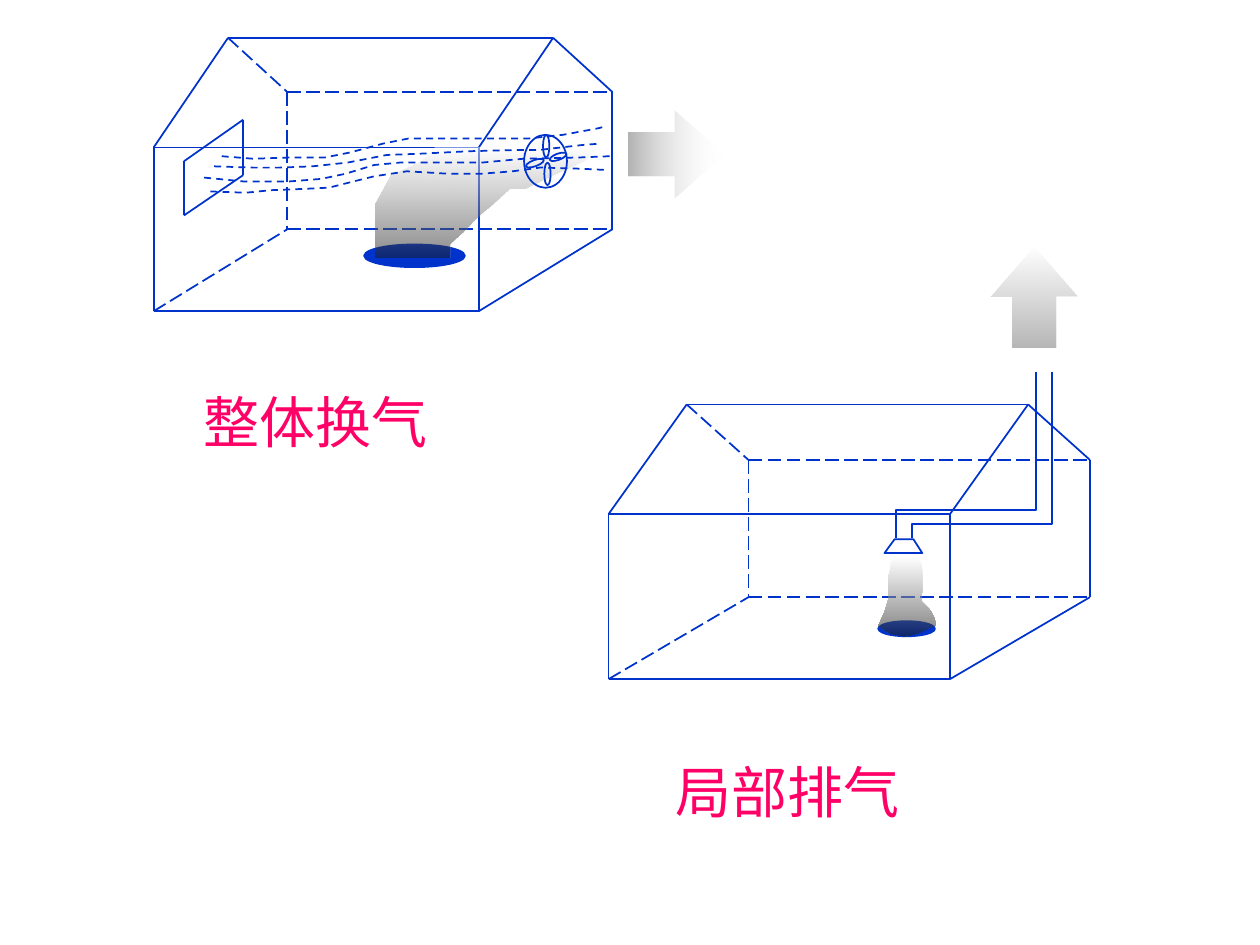
from lxml import etree
from pptx import Presentation
from pptx.dml.color import RGBColor
from pptx.enum.dml import MSO_LINE
from pptx.enum.shapes import MSO_CONNECTOR, MSO_SHAPE
from pptx.enum.text import MSO_AUTO_SIZE
from pptx.oxml.ns import qn
from pptx.util import Inches, Pt

BLUE, PINK = "0033CC", "FF0066"
rgb = RGBColor.from_string


def style(s, line=BLUE, dash=None, fill=None, grad=None, angle=0):
    if line:
        s.line.color.rgb = rgb(line)
        s.line.width = Pt(1)
        s.line.dash_style = dash
    else:
        s.line.fill.background()
    spPr = s._element.spPr
    if fill:
        s.fill.solid()
        s.fill.fore_color.rgb = rgb(fill)
    elif grad:
        s.fill.gradient()
        s.fill.gradient_angle = angle
        spPr.find(qn("a:gradFill")).set("rotWithShape", "0")
        for i, (stop, (color, alpha)) in enumerate(zip(s.fill.gradient_stops, grad)):
            stop.color.rgb = rgb(color)
            stop.position = i
            clr = list(spPr.iter(qn("a:gs")))[i][0]
            etree.SubElement(clr, qn("a:alpha")).set("val", str(alpha * 1000))
    elif hasattr(s, "fill"):
        s.fill.background()
    etree.SubElement(spPr, qn("a:effectLst"))
    return s


def free(shapes, points, close=False, **look):
    pts = [(Inches(x), Inches(y)) for x, y in points]
    fb = shapes.build_freeform(*pts[0], scale=1.0)
    fb.add_line_segments(pts[1:], close=close)
    return style(fb.convert_to_shape(), **look)


prs = Presentation()
prs.slide_width, prs.slide_height = Inches(10), Inches(7.5)
slide = prs.slides.add_slide(prs.slide_layouts[6])

houses = [
    dict(xs=(1.22, 1.81, 2.28), width=2.58, ys=(0.3, 0.73, 1.17, 1.82, 2.47),
         pool=(2.89, 1.94, 0.8, 0.18), alphas=(49, 51),
         plume=[(2.98, 2.04), (2.98, 1.61), (3.1, 1.39), (3.34, 1.28), (3.45, 1.17),
                (4.74, 1.17), (4.63, 1.28), (4.39, 1.39), (4.16, 1.5), (4.04, 1.5),
                (3.92, 1.61), (3.8, 1.71), (3.69, 1.82), (3.57, 1.93), (3.57, 2.04)],
         label="整体换气", label_at=(1.52, 3.03),
         arrow=(4.99, 0.88, 0.76, 0.69), rotation=0, angle=0,
         arrow_grad=[("5F5F5F", 48), ("FFFFFF", 0)]),
    dict(xs=(4.83, 5.45, 5.94), width=2.71, ys=(3.21, 3.65, 4.08, 4.74, 5.39),
         pool=(6.97, 4.93, 0.45, 0.12), alphas=(54, 54),
         plume=[(6.97, 4.97), (7.02, 4.86), (7.05, 4.76), (7.05, 4.58), (7.07, 4.51),
                (7.07, 4.47), (7.1, 4.42), (7.12, 4.43), (7.28, 4.43), (7.31, 4.47),
                (7.32, 4.53), (7.32, 4.69), (7.31, 4.77), (7.38, 4.84), (7.41, 4.89),
                (7.43, 4.96), (7.35, 5), (7.31, 5.02), (7.24, 5.04), (7.18, 5.05),
                (7.07, 5.03)],
         label="局部排气", label_at=(5.26, 5.96),
         arrow=(7.81, 2.01, 0.8, 0.69), rotation=270, angle=270,
         arrow_grad=[("5F5F5F", 0), ("5F5F5F", 46)]),
]

groups = []
for h in houses:
    shapes = slide.shapes.add_group_shape().shapes
    groups.append(shapes)
    front, ridge, back = h["xs"]
    w = h["width"]
    top, back_eave, eave, back_floor, floor = h["ys"]
    peak, peak_r = (ridge, top), (ridge + w, top)
    wall, wall_r = (front, eave), (front + w, eave)
    base, base_r = (front, floor), (front + w, floor)
    rear, rear_r = (back, back_eave), (back + w, back_eave)
    foot, foot_r = (back, back_floor), (back + w, back_floor)

    s = shapes.add_shape(MSO_SHAPE.OVAL, *map(Inches, h["pool"]))
    style(s, fill=BLUE)
    hidden = [(foot, foot_r), (base, foot), (rear, foot), (peak, rear), (rear, rear_r)]
    visible = [(peak, wall), (peak, peak_r), (peak_r, wall_r), (wall, wall_r),
               (wall, base), (base, base_r), (peak_r, rear_r), (rear_r, foot_r),
               (base_r, foot_r), (wall_r, base_r)]
    for edges, dash in ((hidden, MSO_LINE.LONG_DASH), (visible, None)):
        for a, b in edges:
            s = shapes.add_connector(MSO_CONNECTOR.STRAIGHT, *map(Inches, a + b))
            style(s, dash=dash)
    free(shapes, h["plume"], line=None, angle=270,
         grad=list(zip(("FFFFFF", "1C1C1C"), h["alphas"])))

    s = shapes.add_shape(MSO_SHAPE.RIGHT_ARROW, *map(Inches, h["arrow"]))
    s.adjustments[0], s.adjustments[1] = 0.5, 0.576
    s.rotation = h["rotation"]
    style(s, line=None, grad=h["arrow_grad"], angle=h["angle"])

    s = shapes.add_textbox(*map(Inches, h["label_at"] + (1.98, 0.63)))
    tf = s.text_frame
    tf.word_wrap = True
    tf.auto_size = MSO_AUTO_SIZE.SHAPE_TO_FIT_TEXT
    p = tf.paragraphs[0]
    pPr = p._p.get_or_add_pPr()
    pPr.set("marL", str(Inches(0.38)))
    pPr.set("indent", str(Inches(-0.38)))
    r = p.add_run()
    r.text = h["label"]
    r.font.size = Pt(32)
    r.font.name = "Roboto"
    r.font.color.rgb = rgb(PINK)

general, local = groups

window = [(1.46, 1.28), (1.93, 0.95), (1.93, 1.39), (1.46, 1.71)]
for a, b in zip(window, window[1:] + window[:1]):
    style(general.add_connector(MSO_CONNECTOR.STRAIGHT, *map(Inches, a + b)))

fan = [((4.16, 1.07, 0.34, 0.42), 0), ((4.31, 1.07, 0.05, 0.18), 0),
       ((4.17, 1.27, 0.15, 0.05), 340), ((4.32, 1.29, 0.05, 0.18), 0),
       ((4.36, 1.22, 0.14, 0.05), 340)]
for box, rotation in fan:
    s = general.add_shape(MSO_SHAPE.OVAL, *map(Inches, box))
    s.rotation = rotation
    style(s)

airflows = [
    [(1.76, 1.24), (2.01, 1.26), (2.31, 1.25), (2.58, 1.25), (2.78, 1.21), (3.04, 1.14),
     (3.24, 1.1), (4.19, 1.1), (4.47, 1.07), (4.74, 1.02), (4.78, 1.01)],
    [(1.7, 1.32), (2.01, 1.33), (2.22, 1.33), (2.48, 1.32), (2.76, 1.29), (3.07, 1.23),
     (3.33, 1.22), (3.73, 1.2), (4.12, 1.19), (4.28, 1.19), (4.63, 1.15), (4.76, 1.14)],
    [(1.62, 1.41), (1.93, 1.44), (2.3, 1.44), (2.55, 1.42), (2.74, 1.38), (2.97, 1.31),
     (3.18, 1.29), (3.83, 1.29), (4.16, 1.26), (4.6, 1.25), (4.84, 1.24)],
    [(1.67, 1.52), (1.95, 1.53), (2.15, 1.51), (2.41, 1.5), (2.61, 1.49), (2.97, 1.4),
     (3.23, 1.36), (3.57, 1.38), (3.81, 1.38), (4.07, 1.36), (4.29, 1.33), (4.62, 1.34),
     (4.81, 1.35)],
]
for points in airflows:
    free(general, points, dash=MSO_LINE.DASH)

free(local, [(7.02, 4.39), (7.1, 4.28), (7.25, 4.28), (7.32, 4.39)], close=True)
for x, y in ((7.11, 4.05), (7.24, 4.16)):
    free(local, [(x, 4.27), (x, y), (x + 1.11, y), (x + 1.11, 2.95)])

prs.save("out.pptx")
